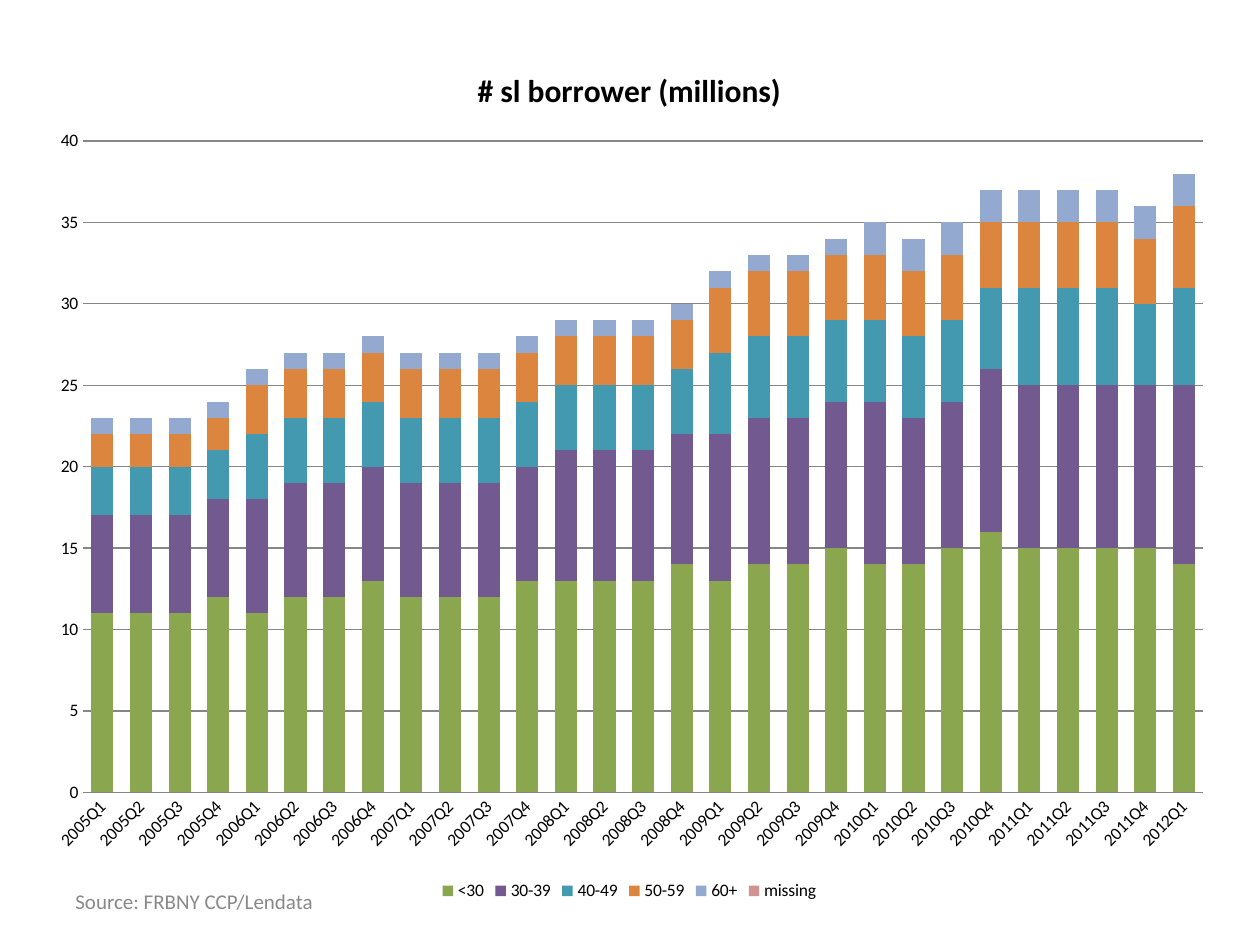
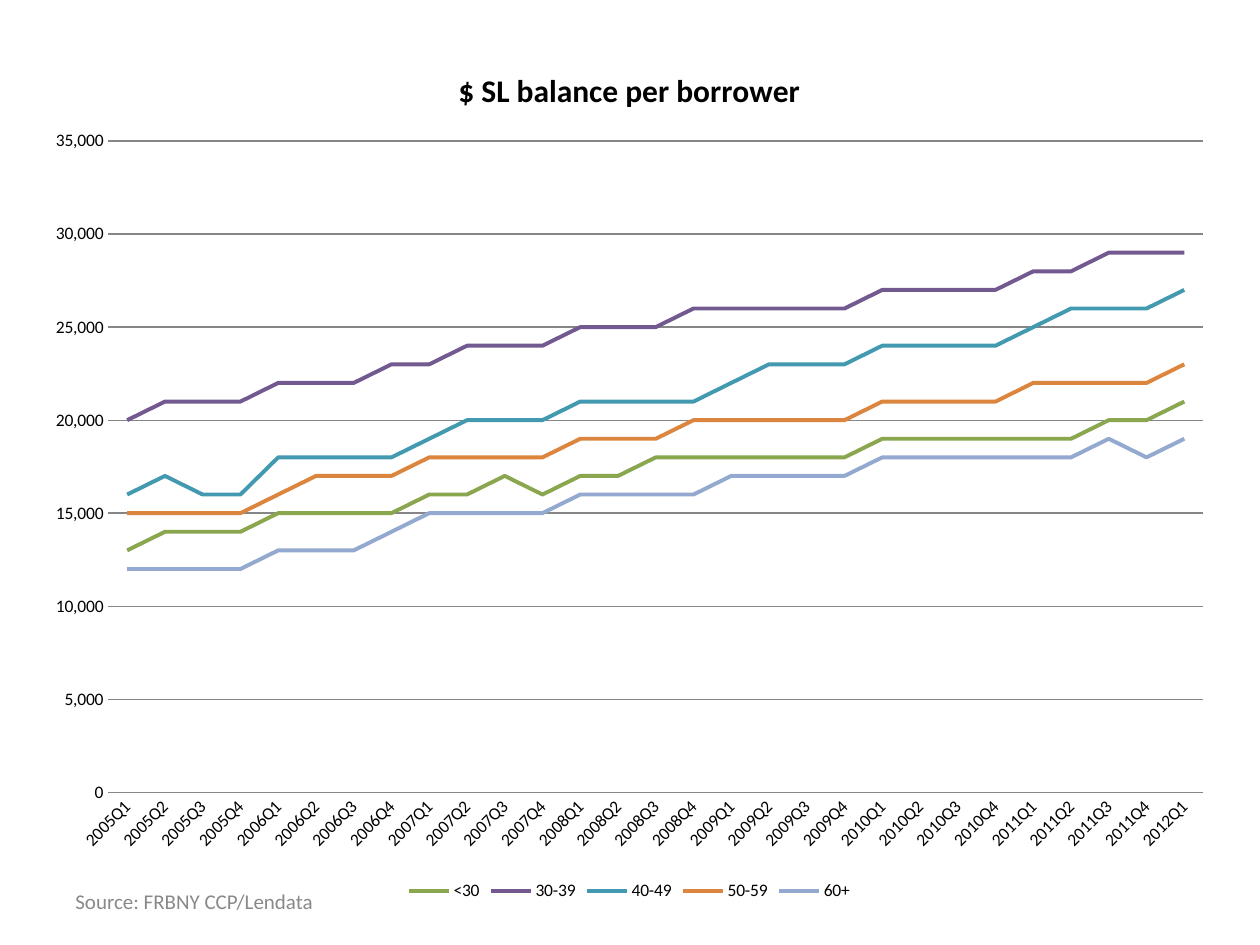
from lxml.etree import SubElement
from pptx import Presentation
from pptx.chart.data import CategoryChartData
from pptx.dml.color import RGBColor
from pptx.enum.chart import XL_CHART_TYPE, XL_LEGEND_POSITION, XL_MARKER_STYLE, XL_TICK_MARK
from pptx.enum.text import MSO_ANCHOR
from pptx.oxml.ns import qn
from pptx.util import Inches, Pt

# Content
SOURCE = "Source: FRBNY CCP/Lendata"
QUARTERS = [f"{year}Q{quarter}" for year in range(2005, 2013) for quarter in range(1, 5)][:29]

BORROWERS = {
    "<30": [11, 11, 11, 12, 11, 12, 12, 13, 12, 12, 12, 13, 13, 13, 13,
            14, 13, 14, 14, 15, 14, 14, 15, 16, 15, 15, 15, 15, 14],
    "30-39": [6, 6, 6, 6, 7, 7, 7, 7, 7, 7, 7, 7, 8, 8, 8,
              8, 9, 9, 9, 9, 10, 9, 9, 10, 10, 10, 10, 10, 11],
    "40-49": [3, 3, 3, 3, 4, 4, 4, 4, 4, 4, 4, 4, 4, 4, 4,
              4, 5, 5, 5, 5, 5, 5, 5, 5, 6, 6, 6, 5, 6],
    "50-59": [2, 2, 2, 2, 3, 3, 3, 3, 3, 3, 3, 3, 3, 3, 3,
              3, 4, 4, 4, 4, 4, 4, 4, 4, 4, 4, 4, 4, 5],
    "60+": [1] * 20 + [2] * 9,
    "missing": [0] * 29,
}
BALANCES_IN_THOUSANDS = {
    "<30": [13, 14, 14, 14, 15, 15, 15, 15, 16, 16, 17, 16, 17, 17, 18,
            18, 18, 18, 18, 18, 19, 19, 19, 19, 19, 19, 20, 20, 21],
    "30-39": [20, 21, 21, 21, 22, 22, 22, 23, 23, 24, 24, 24, 25, 25, 25,
              26, 26, 26, 26, 26, 27, 27, 27, 27, 28, 28, 29, 29, 29],
    "40-49": [16, 17, 16, 16, 18, 18, 18, 18, 19, 20, 20, 20, 21, 21, 21,
              21, 22, 23, 23, 23, 24, 24, 24, 24, 25, 26, 26, 26, 27],
    "50-59": [15, 15, 15, 15, 16, 17, 17, 17, 18, 18, 18, 18, 19, 19, 19,
              20, 20, 20, 20, 20, 21, 21, 21, 21, 22, 22, 22, 22, 23],
    "60+": [12, 12, 12, 12, 13, 13, 13, 14, 15, 15, 15, 15, 16, 16, 16,
            16, 17, 17, 17, 17, 18, 18, 18, 18, 18, 18, 19, 18, 19],
}
# Title, chart type, series, unit, axis maximum, axis step, number format, plot left
CHARTS = [
    ("# sl borrower (millions)", XL_CHART_TYPE.COLUMN_STACKED,
     BORROWERS, 1, 40, 5, "General", 0.4),
    ("$ SL balance per borrower", XL_CHART_TYPE.LINE,
     BALANCES_IN_THOUSANDS, 1000, 35000, 5000, "#,##0", 0.6),
]

# Shared style, lengths in inches
FONT = "Calibri"
AGE_COLOURS = {
    "<30": "8AA64F", "30-39": "725990", "40-49": "4299B0",
    "50-59": "DC853E", "60+": "93A9CF", "missing": "D19392",
}
BLACK, GRID, GREY = "000000", "868686", "898989"
CHART_WIDTH, CHART_HEIGHT = 9.47, 6.88
PLOT_TOP, PLOT_RIGHT, PLOT_BOTTOM = 0.81, 9.29, 5.98


def colour(hex_string):
    return RGBColor.from_string(hex_string)


def style_font(font, size, hex_string, bold=False):
    font.name, font.size, font.bold = FONT, Pt(size), bold
    font.color.rgb = colour(hex_string)


def style_line(line, hex_string, width):
    line.color.rgb = colour(hex_string)
    line.width = Pt(width)


def add_source(slide):
    box = slide.shapes.add_textbox(Inches(0.5), Inches(6.95), Inches(2.33), Inches(0.4))
    frame = box.text_frame
    frame.word_wrap = True
    frame.vertical_anchor = MSO_ANCHOR.MIDDLE
    frame.text = SOURCE
    style_font(frame.paragraphs[0].font, 12, GREY)


def place_plot(chart, left):
    """Fix the inner plot area, as shares of the chart's size."""
    plot_area = chart._chartSpace.chart.plotArea
    layout = plot_area.find(qn("c:layout"))
    if layout is None:
        layout = SubElement(plot_area, qn("c:layout"))
        plot_area.insert(0, layout)
    manual = SubElement(layout, qn("c:manualLayout"))
    settings = [
        ("layoutTarget", "inner"), ("xMode", "edge"), ("yMode", "edge"),
        ("x", left / CHART_WIDTH), ("y", PLOT_TOP / CHART_HEIGHT),
        ("w", (PLOT_RIGHT - left) / CHART_WIDTH),
        ("h", (PLOT_BOTTOM - PLOT_TOP) / CHART_HEIGHT),
    ]
    for name, value in settings:
        SubElement(manual, qn(f"c:{name}")).set("val", str(value))


def style_axes(chart, maximum, step, number_format):
    category_axis, value_axis = chart.category_axis, chart.value_axis
    for axis in (category_axis, value_axis):
        axis.major_tick_mark = axis.minor_tick_mark = XL_TICK_MARK.NONE
        style_font(axis.tick_labels.font, 10, BLACK)
    style_line(category_axis.format.line, GRID, 0.75)

    # Quarter labels slope upwards at 45 degrees
    label_body = category_axis._element.find(qn("c:txPr")).find(qn("a:bodyPr"))
    label_body.set("rot", str(-45 * 60000))
    label_body.set("vert", "horz")

    value_axis.minimum_scale, value_axis.maximum_scale = 0, maximum
    value_axis.major_unit = step
    value_axis.format.line.fill.background()
    value_axis.has_major_gridlines = True
    style_line(value_axis.major_gridlines.format.line, GRID, 0.75)
    value_axis.tick_labels.number_format = number_format
    value_axis.tick_labels.number_format_is_linked = False


def style_series(chart, is_line):
    plot = chart.plots[0]
    plot.vary_by_categories = False
    if not is_line:
        plot.gap_width, plot.overlap = 75, 100
    for series in plot.series:
        age_colour = AGE_COLOURS[series.name]
        if is_line:
            series.smooth = False
            series.marker.style = XL_MARKER_STYLE.NONE
            style_line(series.format.line, age_colour, 2.25)
        else:
            series.format.fill.solid()
            series.format.fill.fore_color.rgb = colour(age_colour)


def add_age_chart(slide, title, chart_type, series_values, unit,
                  maximum, step, number_format, plot_left):
    data = CategoryChartData(number_format=number_format)
    data.categories = QUARTERS
    for age_group, values in series_values.items():
        data.add_series(age_group, [value * unit for value in values])
    chart = slide.shapes.add_chart(
        chart_type, Inches(0.26), Inches(0.31),
        Inches(CHART_WIDTH), Inches(CHART_HEIGHT), data).chart
    style_font(chart.font, 10, BLACK)

    # Title and legend
    chart.has_title = True
    chart.chart_title.include_in_layout = False
    title_frame = chart.chart_title.text_frame
    title_frame.text = title
    style_font(title_frame.paragraphs[0].font, 18, BLACK, bold=True)
    chart.has_legend = True
    chart.legend.position = XL_LEGEND_POSITION.BOTTOM
    chart.legend.include_in_layout = False
    style_font(chart.legend.font, 10, BLACK)

    place_plot(chart, plot_left)
    style_axes(chart, maximum, step, number_format)
    style_series(chart, chart_type == XL_CHART_TYPE.LINE)


def main():
    presentation = Presentation()
    presentation.slide_width, presentation.slide_height = Inches(10), Inches(7.5)
    blank_layout = presentation.slide_layouts.get_by_name("Blank")
    for chart_content in CHARTS:
        slide = presentation.slides.add_slide(blank_layout)
        add_source(slide)
        add_age_chart(slide, *chart_content)
    presentation.save("out.pptx")


if __name__ == "__main__":
    main()
